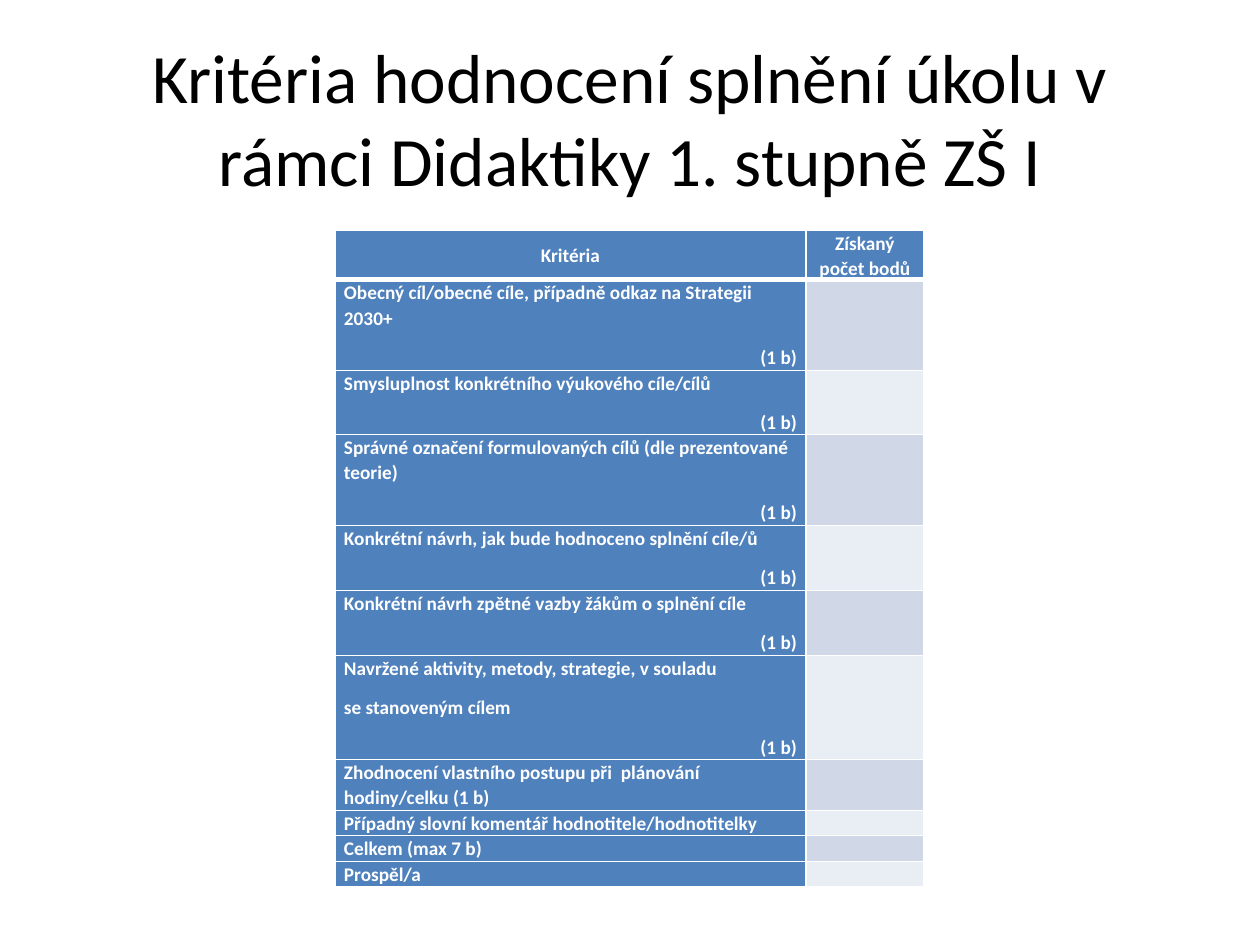
import pptx
import pptx.util
import pptx.dml.color
import pptx.enum.text
import pptx.oxml.ns
from lxml import etree

SCALE = 914400 / 126
ALIGN = pptx.enum.text.PP_ALIGN
ANCHOR = pptx.enum.text.MSO_ANCHOR

THEME = {
    "font": "Calibri", "title": 39.6, "body": 11,
    "ink": "000000", "light": "FFFFFF", "head": "4F81BD",
    "bands": ("D0D8E8", "E9EDF4"),
}

HEADS = ("Kritéria", "Získaný počet bodů")
POINT = "(1 b)"
# Row height in px, then the paragraphs of its criterion
ROWS = (
    (91, ("Obecný cíl/obecné cíle, případně odkaz na Strategii 2030+", POINT)),
    (64, ("Smysluplnost konkrétního výukového cíle/cílů", POINT)),
    (91, ("Správné označení formulovaných cílů (dle prezentované teorie)", POINT)),
    (65, ("Konkrétní návrh, jak bude hodnoceno splnění cíle/ů", POINT)),
    (65, ("Konkrétní návrh zpětné vazby žákům o splnění cíle", POINT)),
    (104, ("Navržené aktivity, metody, strategie, v souladu",
           "se stanoveným cílem", POINT)),
    (51, ("Zhodnocení vlastního postupu při  plánování hodiny/celku (1 b)",)),
    (25, ("Případný slovní komentář hodnotitele/hodnotitelky",)),
    (26, ("Celkem (max 7 b)",)),
    (25, ("Prospěl/a",)),
)
HEAD_TALL = 49
WIDE = 471 / 589  # share of the criteria column


def px(num):
    return pptx.util.Emu(round(num * SCALE))


def rgb(code):
    return pptx.dml.color.RGBColor.from_string(code)


def style(item, form):
    for name, value in form.items():
        setattr(item, name, value)


def write(para, text, size, color, bold, form):
    style(para, form)
    run = para.add_run()
    run.text = text
    style(run.font, {"name": THEME["font"], "size": pptx.util.Pt(size),
                     "bold": bold})
    run.font.color.rgb = rgb(color)


def edge(cell, base):
    """Draw white borders, with the given weight at the bottom."""
    props = cell._tc.get_or_add_tcPr()
    for side, size in (("L", 1), ("R", 1), ("T", 1), ("B", base)):
        line = etree.SubElement(props, pptx.oxml.ns.qn("a:ln" + side),
                                w=str(pptx.util.Pt(size)))
        fill = etree.SubElement(line, pptx.oxml.ns.qn("a:solidFill"))
        etree.SubElement(fill, pptx.oxml.ns.qn("a:srgbClr"),
                         val=THEME["light"])


def fill_cell(cell, texts, color, align=ALIGN.LEFT, anchor=ANCHOR.TOP, base=1):
    style(cell, {"margin_left": px(9), "margin_right": px(9),
                 "margin_top": 0, "margin_bottom": 0,
                 "vertical_anchor": anchor})
    edge(cell, base)
    cell.fill.solid()
    cell.fill.fore_color.rgb = rgb(color)
    frame = cell.text_frame
    for spot, text in enumerate(texts):
        para = frame.add_paragraph() if spot else frame.paragraphs[0]
        write(para, text, THEME["body"], THEME["light"], True, {
            "alignment": ALIGN.RIGHT if text == POINT else align,
            "line_spacing": 1.07, "space_after": pptx.util.Pt(8)})
    if not texts:
        # Keep the empty cell from stretching its row
        etree.SubElement(frame.paragraphs[0]._p,
                         pptx.oxml.ns.qn("a:endParaRPr"),
                         sz=str(THEME["body"] * 100))


def add_title(slide, left, top, width, height):
    box = slide.shapes.add_textbox(px(left), px(top), px(width), px(height))
    frame = box.text_frame
    style(frame, {"word_wrap": True, "vertical_anchor": ANCHOR.MIDDLE})
    write(frame.paragraphs[0],
          "Kritéria hodnocení splnění úkolu v rámci Didaktiky 1. stupně ZŠ I",
          THEME["title"], THEME["ink"], False, {"alignment": ALIGN.CENTER})


def add_grid(slide, left, top, width):
    talls = [HEAD_TALL] + [tall for tall, _ in ROWS]
    table = slide.shapes.add_table(len(talls), 2, px(left), px(top),
                                   px(width), px(sum(talls))).table
    for col, share in zip(table.columns, (WIDE, 1 - WIDE)):
        col.width = px(width * share)
    for row, tall in zip(table.rows, talls):
        row.height = px(tall)
    # Header row
    for col, (head, anchor) in enumerate(zip(HEADS,
                                             (ANCHOR.MIDDLE, ANCHOR.TOP))):
        fill_cell(table.cell(0, col), (head,), THEME["head"],
                  ALIGN.CENTER, anchor, 3)
    # Criteria, with banded cells for the points
    for num, (_, texts) in enumerate(ROWS):
        fill_cell(table.cell(num + 1, 0), texts, THEME["head"])
        fill_cell(table.cell(num + 1, 1), (), THEME["bands"][num % 2])


def main():
    deck = pptx.Presentation()
    style(deck, {"slide_width": px(1260), "slide_height": px(945)})
    slide = deck.slides.add_slide(deck.slide_layouts[6])
    add_title(slide, 63, 38, 1134, 158)
    add_grid(slide, 335, 230, 589)
    deck.save("out.pptx")


if __name__ == "__main__":
    main()
